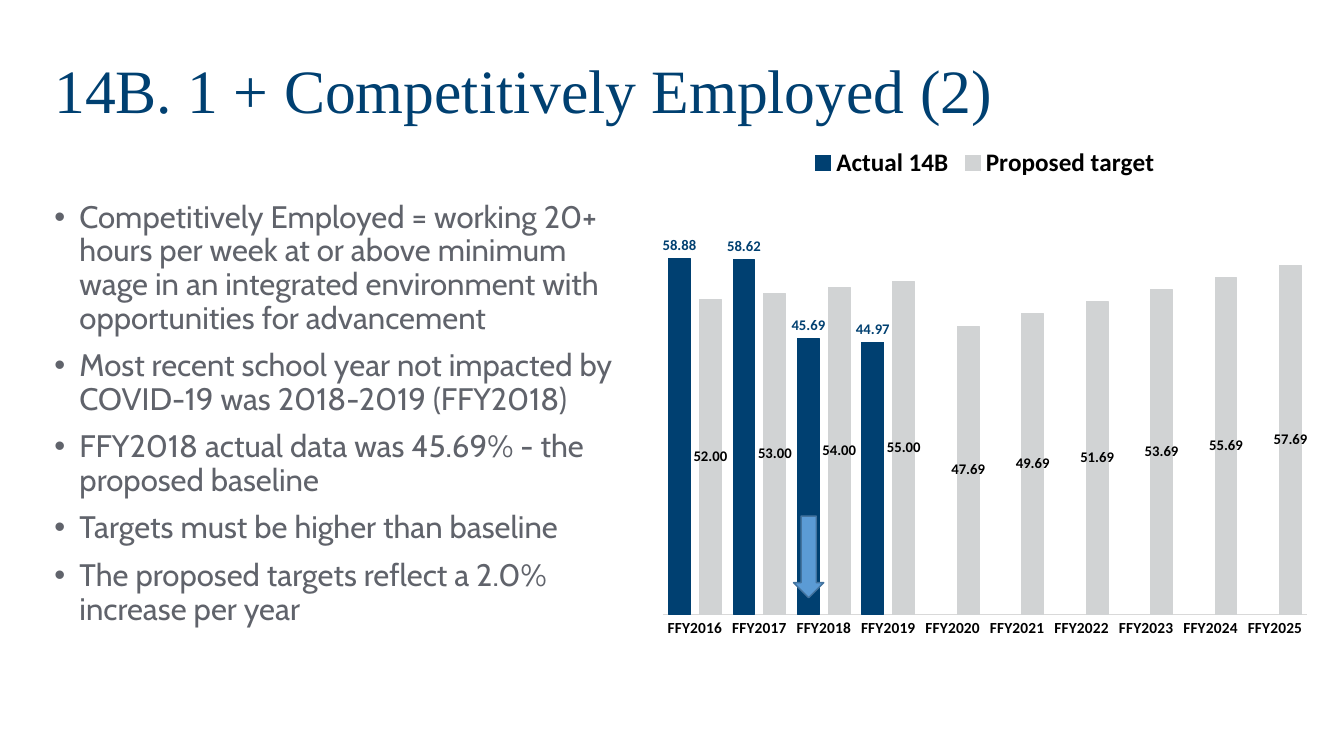
from dataclasses import dataclass

from lxml import etree
from pptx import Presentation
from pptx import util as u
from pptx.chart import data as cd
from pptx.dml.color import RGBColor
from pptx.enum import chart as ch, shapes, text
from pptx.oxml import ns

NAVY, GREY, BLACK = "004071", "D1D3D4", "000000"
YEARS = [f"FFY{year}" for year in range(2016, 2026)]
POINTS = [
    "Competitively Employed = working 20+ hours per week at or above minimum wage "
    "in an integrated environment with opportunities for advancement",
    "Most recent school year not impacted by COVID-19 was 2018-2019 (FFY2018)",
    "FFY2018 actual data was 45.69% - the proposed baseline",
    "Targets must be higher than baseline",
    "The proposed targets reflect a 2.0% increase per year",
]


@dataclass
class Series:
    name: str
    vals: list
    fill: str
    ink: str
    spot: ch.XL_LABEL_POSITION


SERIES = [
    Series("Actual 14B", [58.88, 58.62, 45.69, 44.97] + [None] * 6,
           NAVY, NAVY, ch.XL_LABEL_POSITION.OUTSIDE_END),
    Series("Proposed target",
           [52, 53, 54, 55, 47.69, 49.69, 51.69, 53.69, 55.69, 57.69],
           GREY, BLACK, ch.XL_LABEL_POSITION.CENTER),
]


def color(code: str) -> RGBColor:
    return RGBColor.from_string(code)


def box(left: float, top: float, width: float, height: float) -> list:
    return [u.Inches(n) for n in (left, top, width, height)]


def style(font, name: str, size: float, ink: str, bold: bool = False) -> None:
    font.name, font.size, font.bold = name, u.Pt(size), bold
    font.color.rgb = color(ink)


def paint(form, fill: str, line: str, width: float) -> None:
    form.fill.solid()
    form.fill.fore_color.rgb = color(fill)
    form.line.color.rgb = color(line)
    form.line.width = u.Pt(width)


def add_title(slide) -> None:
    frame = slide.shapes.add_textbox(*box(0.44, 0.16, 12.43, 1.53)).text_frame
    frame.word_wrap = True
    frame.vertical_anchor = text.MSO_ANCHOR.MIDDLE
    frame.text = "14B. 1 + Competitively Employed (2)"
    para = frame.paragraphs[0]
    para.line_spacing = 0.9
    style(para.runs[0].font, "Times New Roman", 44, NAVY)


def add_points(slide) -> None:
    frame = slide.shapes.add_textbox(*box(0.44, 1.95, 6, 4.34)).text_frame
    frame.word_wrap = True
    frame.text = "\n".join(POINTS)
    for i, para in enumerate(frame.paragraphs):
        para.line_spacing = 0.9
        para.space_before = u.Pt(10 if i else 0)
        props = para._p.get_or_add_pPr()
        props.set("marL", str(u.Inches(0.25)))
        props.set("indent", str(u.Inches(-0.25)))
        etree.SubElement(props, ns.qn("a:buFont")).set("typeface", "Arial")
        etree.SubElement(props, ns.qn("a:buChar")).set("char", "•")
        style(para.runs[0].font, "Cabin", 22.2, "60636B")


def place_plot(chart, **sides: float) -> None:
    """Fix the inner plot area, as fractions of the chart."""
    plot = chart._chartSpace.chart.plotArea
    for old in plot.findall(ns.qn("c:layout")):
        plot.remove(old)
    layout = etree.Element(ns.qn("c:layout"))
    plot.insert(0, layout)
    manual = etree.SubElement(layout, ns.qn("c:manualLayout"))
    rules = {"layoutTarget": "inner", "xMode": "edge", "yMode": "edge", **sides}
    for tag, val in rules.items():
        etree.SubElement(manual, ns.qn(f"c:{tag}")).set("val", str(val))


def add_chart(slide) -> None:
    data = cd.CategoryChartData(number_format="0.00")
    data.categories = YEARS
    for item in SERIES:
        data.add_series(item.name, item.vals)
    chart = slide.shapes.add_chart(ch.XL_CHART_TYPE.COLUMN_CLUSTERED,
                                   *box(6.44, 1.34, 6.66, 5.06), data).chart
    chart.has_title = False
    style(chart.font, "Calibri", 10, BLACK)

    chart.has_legend = True
    chart.legend.position = ch.XL_LEGEND_POSITION.TOP
    chart.legend.include_in_layout = False
    style(chart.legend.font, "Calibri", 18, BLACK, True)

    years = chart.category_axis
    years.major_tick_mark = ch.XL_TICK_MARK.NONE
    years.format.line.color.rgb = color("D9D9D9")
    years.format.line.width = u.Pt(0.75)
    style(years.tick_labels.font, "Calibri", 11, BLACK, True)

    scale = chart.value_axis
    scale.minimum_scale, scale.maximum_scale = 0, 70
    scale.has_major_gridlines = False
    scale.visible = False

    plot = chart.plots[0]
    plot.gap_width, plot.overlap = 54, -42
    plot.vary_by_categories = False
    for bars, item in zip(plot.series, SERIES):
        paint(bars.format, item.fill, item.fill, 0.75)
        bars.invert_if_negative = False
        labels = bars.data_labels
        labels.show_value = True
        labels.position = item.spot
        labels.number_format = "0.00"
        labels.number_format_is_linked = False
        style(labels.font, "Calibri", 10.5, item.ink, True)
    place_plot(chart, x=0.02, y=0.11, w=0.96, h=0.83)


def add_arrow(slide) -> None:
    arrow = slide.shapes.add_shape(shapes.MSO_SHAPE.UP_ARROW,
                                   *box(7.87, 5.12, 0.3, 0.81))
    arrow.rotation = 180
    arrow.shadow.inherit = False
    paint(arrow, "5B9BD5", "43739E", 1)


def main() -> None:
    deck = Presentation()
    deck.slide_width, deck.slide_height = u.Inches(13.33), u.Inches(7.5)
    slide = deck.slides.add_slide(deck.slide_layouts[6])
    add_title(slide)
    add_points(slide)
    add_chart(slide)
    add_arrow(slide)
    deck.save("out.pptx")


if __name__ == "__main__":
    main()
